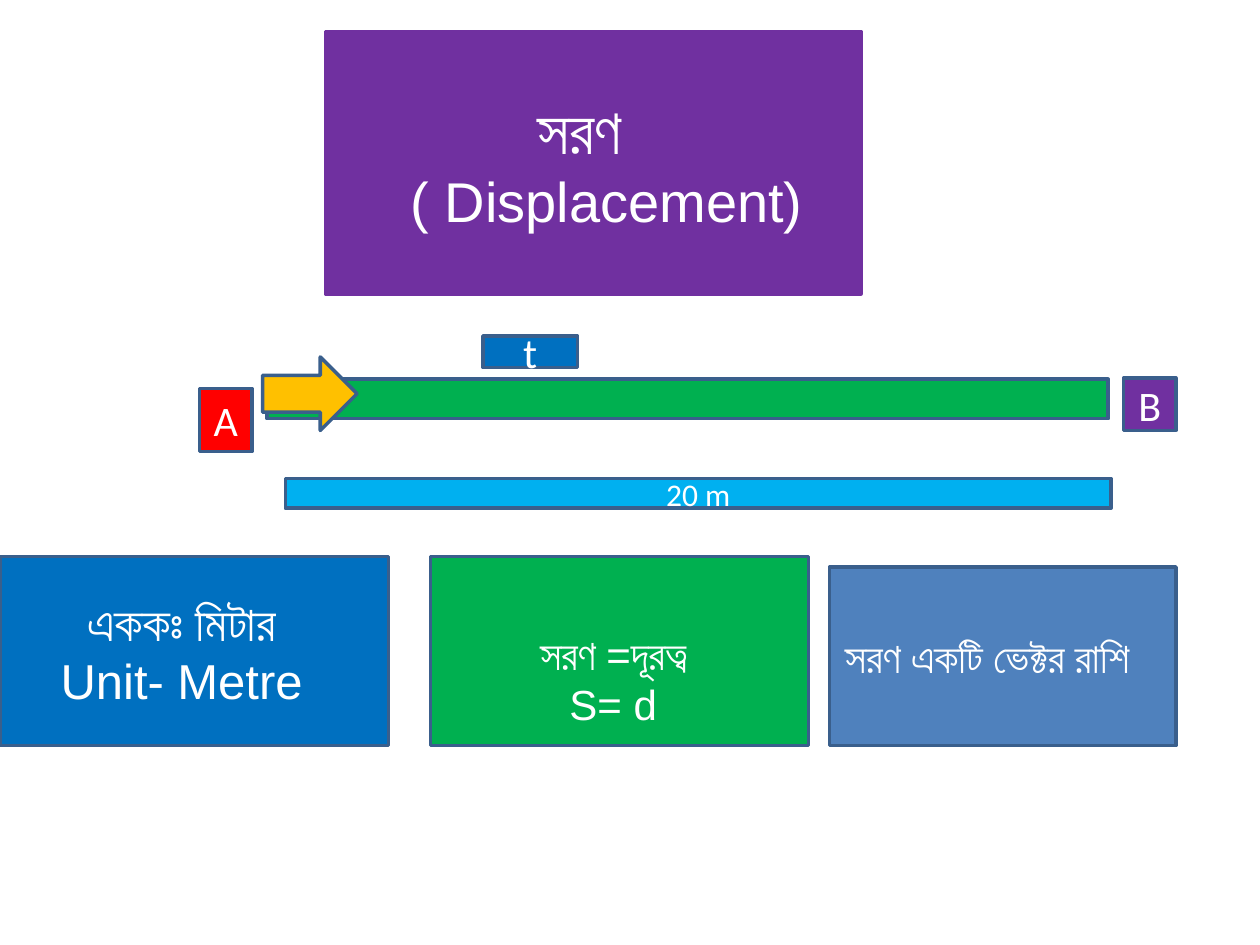
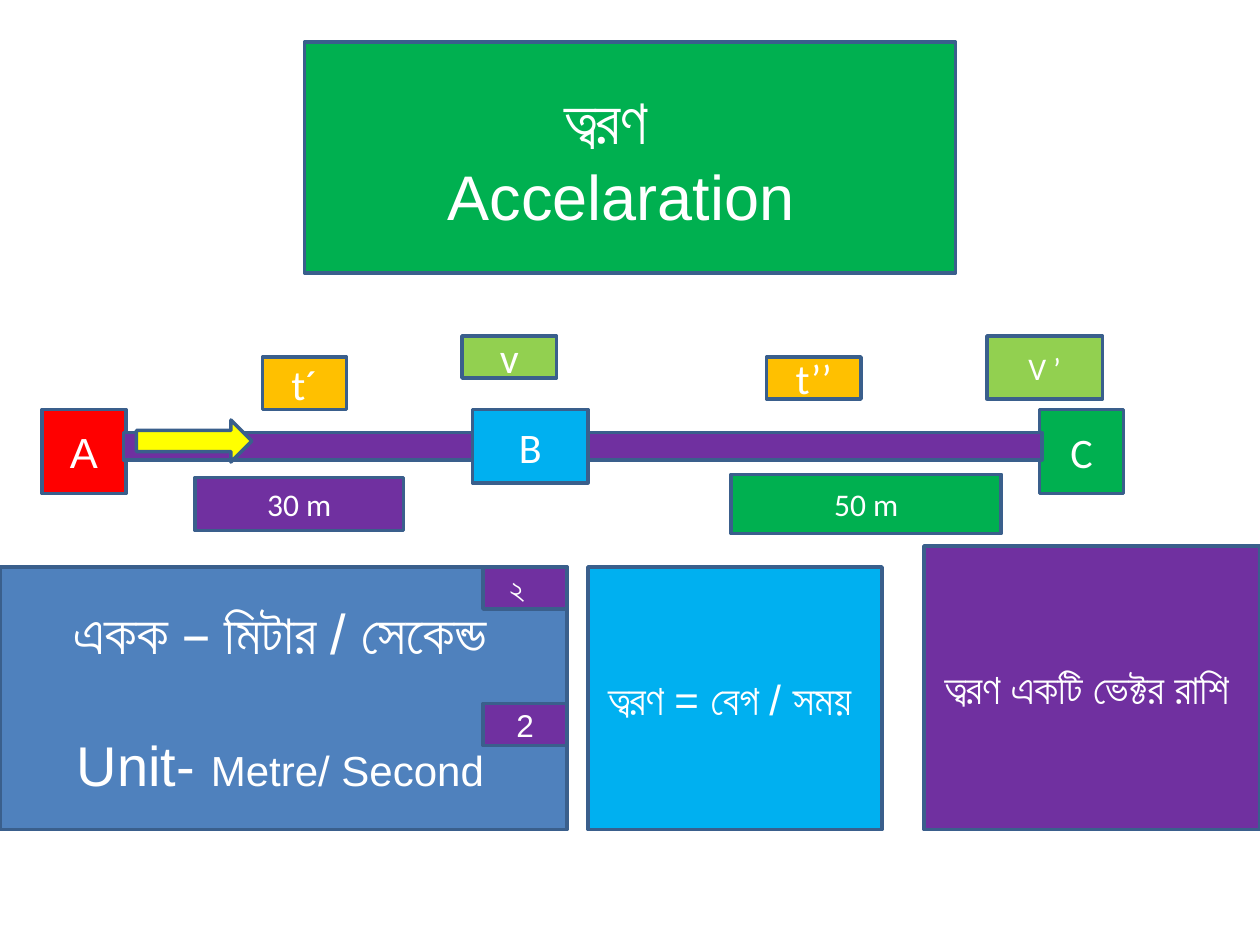
from pptx import Presentation
from pptx.dml.color import RGBColor
from pptx.enum.shapes import MSO_SHAPE
from pptx.enum.text import MSO_ANCHOR, PP_ALIGN
from pptx.util import Inches, Pt

WHITE = RGBColor(0xFF, 0xFF, 0xFF)
EDGE = RGBColor(0x3A, 0x5F, 0x8C)
PURPLE = RGBColor(0x70, 0x30, 0xA0)
RED = RGBColor(0xFF, 0x00, 0x00)
BLUE = RGBColor(0x00, 0x70, 0xC0)
SKY = RGBColor(0x00, 0xB0, 0xF0)
STEEL = RGBColor(0x4F, 0x81, 0xBD)
GREEN = RGBColor(0x00, 0xB0, 0x50)
LIME = RGBColor(0x92, 0xD0, 0x50)
GOLD = RGBColor(0xFF, 0xC0, 0x00)
YELLOW = RGBColor(0xFF, 0xFF, 0x00)

COLS, ROWS = 120, 90
CELL = Inches(10) / COLS
RECT = MSO_SHAPE.RECTANGLE
BAR = MSO_SHAPE.MATH_MINUS
ARROW = MSO_SHAPE.RIGHT_ARROW


def line(*parts, size=24, font="Arial", indent=0, before=0):
    return dict(parts=parts, size=size, font=font, indent=indent, before=before)


def label(text, size=24):
    return [line(text, size=size, font="Calibri")]


# kind, fill, (column, row, width, height) in cells, lines, options
MOVE = [
    (RECT, PURPLE, (31, 3, 51, 25),
     [line("সরণ", size=36), line("( Displacement)", size=32, indent=5.2)],
     dict(right=2.6, edge=PURPLE)),
    (RECT, RED, (19, 37, 5, 6), label("A"), {}),
    (RECT, PURPLE, (107, 36, 5, 5), label("B"), {}),
    (RECT, BLUE, (0, 53, 37, 18),
     [line("এককঃ মিটার", size=28), line("Unit- Metre", size=28)], dict(right=2.4)),
    (RECT, BLUE, (46, 32, 9, 3), label("t"), {}),
    (BAR, GREEN, (11, 30, 109, 16), [], {}),
    (BAR, SKY, (13, 41, 107, 12), label("20 m", 18), {}),
    (ARROW, GOLD, (25, 34, 9, 7), [], {}),
    (RECT, GREEN, (41, 53, 36, 18),
     [line("সরণ =দূরত্ব"), line("S= d")], dict(right=1.2, top=5.3)),
    (RECT, STEEL, (79, 54, 33, 17),
     [line("সরণ একটি ভেক্টর রাশি")], dict(right=3)),
]

SPEED = [
    (RECT, GREEN, (29, 4, 62, 22),
     [line("ত্বরণ", size=36), line("Accelaration", size=36, indent=2.9)],
     dict(right=4.6)),
    (RECT, RED, (4, 39, 8, 8), [line("A")], {}),
    (RECT, GREEN, (99, 39, 8, 8), label("C"), {}),
    (RECT, STEEL, (0, 54, 54, 25),
     [line("একক – মিটার / সেকেন্ড", size=32),
      line("Unit- ", ("Metre/ Second", 24), size=32, before=37)], dict(right=0.6)),
    (RECT, GOLD, (25, 34, 8, 5), label("t´"), {}),
    (RECT, LIME, (44, 32, 9, 4), label("v"), {}),
    (RECT, PURPLE, (46, 54, 8, 4), [line("২", size=18)], dict(right=1.5)),
    (RECT, GOLD, (73, 34, 9, 4), label("t’’"), {}),
    (RECT, PURPLE, (46, 67, 8, 4), [line("2", size=18)], {}),
    (RECT, SKY, (56, 54, 28, 25), [line("ত্বরণ = বেগ / সময়")], dict(right=1)),
    (RECT, PURPLE, (88, 52, 32, 27), [line("ত্বরণ একটি ভেক্টর রাশি")], dict(right=1)),
    (BAR, PURPLE, (-4, 37, 119, 11), [], {}),
    (RECT, SKY, (45, 39, 11, 7), label("B"), {}),
    (BAR, PURPLE, (15, 41, 27, 14), label("30 m", 18), dict(thick=0.36)),
    (BAR, GREEN, (65, 36, 35, 24), label("50 m", 18), {}),
    (RECT, LIME, (94, 32, 11, 6), label("V ’", 18), {}),
    (ARROW, YELLOW, (13, 40, 11, 4), [], {}),
]


def cells(count):
    return round(count * CELL)


def write(frame, lines, right, top):
    frame.word_wrap = True
    frame.vertical_anchor = MSO_ANCHOR.MIDDLE
    frame.margin_left = Inches(0.05)
    frame.margin_right = Inches(0.05) + cells(right)
    frame.margin_top = Inches(0.05) + cells(top)
    for num, item in enumerate(lines):
        para = frame.add_paragraph() if num else frame.paragraphs[0]
        para.alignment = PP_ALIGN.CENTER
        if item["before"]:
            para.space_before = Pt(item["before"])
        if item["indent"]:
            para._p.get_or_add_pPr().set("marL", str(cells(item["indent"])))
        para.font.size = Pt(item["size"])
        para.font.name = item["font"]
        para.font.color.rgb = WHITE
        for part in item["parts"]:
            text, size = (part, None) if isinstance(part, str) else part
            run = para.add_run()
            run.text = text
            if size:
                run.font.size = Pt(size)


def draw(slide, kind, fill, place, lines, right=0, top=0, edge=EDGE, thick=None):
    shape = slide.shapes.add_shape(kind, *map(cells, place))
    shape.shadow.inherit = False
    shape.fill.solid()
    shape.fill.fore_color.rgb = fill
    shape.line.color.rgb = edge
    shape.line.width = Pt(2)
    if thick:
        shape.adjustments[0] = thick
    if lines:
        write(shape.text_frame, lines, right, top)


def main():
    deck = Presentation()
    deck.slide_width, deck.slide_height = cells(COLS), cells(ROWS)
    for items in (MOVE, SPEED):
        slide = deck.slides.add_slide(deck.slide_layouts[6])
        for kind, fill, place, lines, extra in items:
            draw(slide, kind, fill, place, lines, **extra)
    deck.save("out.pptx")


if __name__ == "__main__":
    main()
